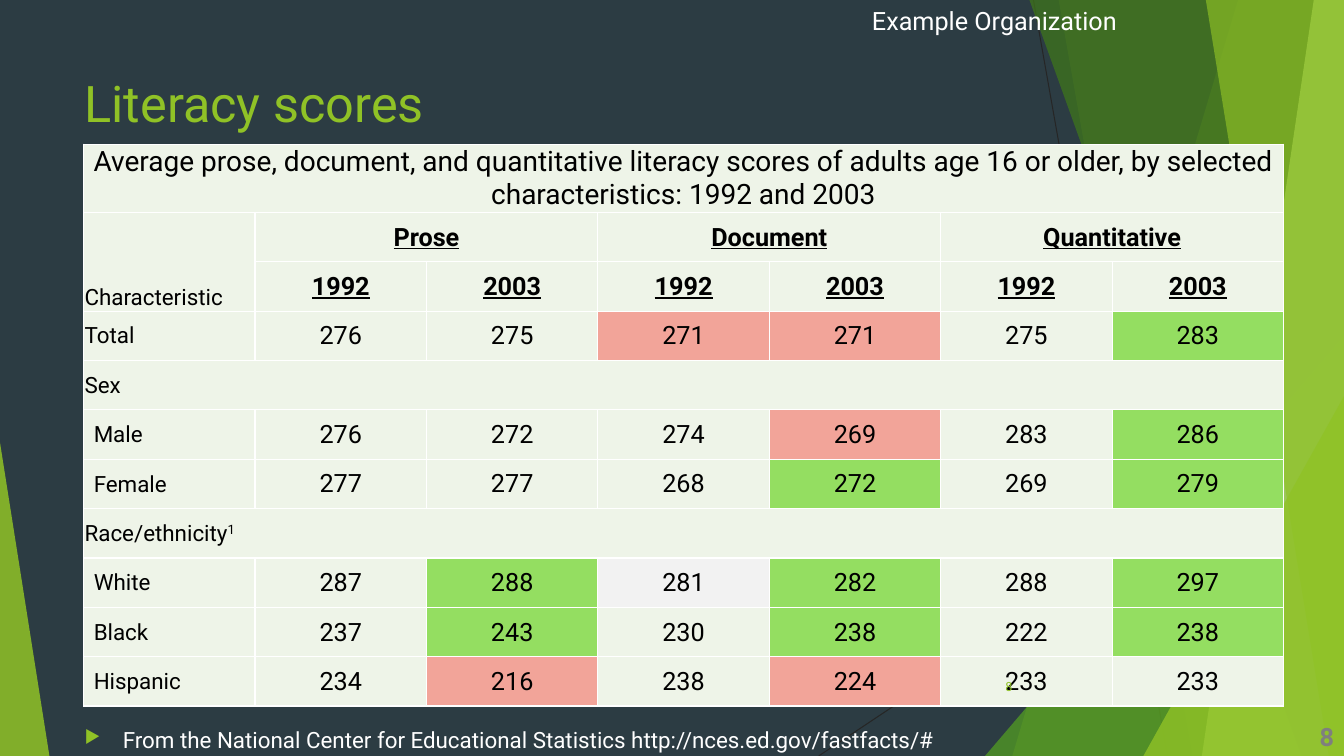
from dataclasses import dataclass

from lxml import etree
from pptx import Presentation
from pptx import util as u
from pptx.dml.color import RGBColor
from pptx.enum import shapes, text
from pptx.oxml import ns

FONT = "Roboto"
HEX = {
    "back": "2C3C43", "lime": "90C226", "leaf": "54A021", "moss": "3F7819",
    "pale": "C0E474", "line": "262626", "white": "FFFFFF", "black": "000000",
    "gray": "7F7F7F", "cell": "EEF4E8", "up": "94DE61", "down": "F2A499",
    "plain": "F2F2F2",
}
MARKS = {"+": "up", "-": "down", "=": "plain"}  # last sign of a score sets its fill
LEFT, MID, RIGHT = text.PP_ALIGN.LEFT, text.PP_ALIGN.CENTER, text.PP_ALIGN.RIGHT
TOP, CENTER, BASE = text.MSO_ANCHOR.TOP, text.MSO_ANCHOR.MIDDLE, text.MSO_ANCHOR.BOTTOM


@dataclass
class Band:
    """Four-sided strip that reaches from the top edge to the bottom edge."""
    top: tuple[float, float]
    base: tuple[float, float]
    color: str
    alpha: int


@dataclass
class Wedge:
    box: tuple[float, float, float, float]
    tip: float
    color: str
    alpha: int


@dataclass
class Label:
    words: str
    box: tuple[float, float, float, float]
    size: int
    color: str
    align: int = LEFT
    anchor: int = TOP
    bold: bool = False
    bullet: bool = False


DECOR = [
    Band((12.28, 13.33), (10.04, 13.33), "lime", 30),
    Band((10.5, 13.33), (11.83, 13.33), "lime", 20),
    Wedge((9.77, 3.33, 3.56, 4.17), 1, "leaf", 72),
    Band((10.21, 13.33), (12.91, 13.33), "moss", 70),
    Band((13.03, 13.33), (11.92, 13.33), "pale", 70),
    Band((11.96, 13.33), (13.18, 13.33), "lime", 65),
    Wedge((11.34, 3.93, 1.99, 3.57), 1, "lime", 80),
    Wedge((0, 4.39, 0.49, 3.11), 0, "lime", 85),
]
LINES = [(10.25, 0, 11.58, 7.5), (13.33, 4.03, 8.12, 7.5)]
TITLE = Label("Literacy scores", (0.74, 0.67, 9.4, 1.44), 36, "lime")
NOTES = [
    Label("From the National Center for Educational Statistics "
          "http://nces.ed.gov/fastfacts/#", (0.74, 7.15, 9.4, 0.35), 16, "white", bullet=True),
    Label("Example Organization", (8.55, 0, 4.78, 0.4), 18, "white"),
    Label("8", (9.39, 6.61, 0.75, 0.4), 9, "lime", RIGHT, CENTER),
    Label("8", (12.58, 7.12, 0.75, 0.38), 18, "gray", RIGHT, CENTER, True),
]
HEAD = ("Average prose, document, and quantitative literacy scores of adults "
        "age 16 or older, by selected characteristics: 1992 and 2003")
GROUPS = ["Prose", "Document", "Quantitative"]
YEARS = ["1992", "2003"]
SCORES = [
    ("Total", "276 275 271- 271- 275 283+"),
    ("Sex", ""),
    ("Male", "276 272 274 269- 283 286+"),
    ("Female", "277 277 268 272+ 269 279+"),
    ("Race/ethnicity", ""),
    ("White", "287 288+ 281= 282+ 288 297+"),
    ("Black", "237 243+ 230 238+ 222 238+"),
    ("Hispanic", "234 216- 238 224- 233 233"),
]
FLUSH = {"Total", "Sex", "Race/ethnicity"}


def rgb(name: str) -> RGBColor:
    return RGBColor.from_string(HEX[name])


def sub(node, tag: str, **attrs: str):
    return etree.SubElement(node, ns.qn(tag), attrs)


def add_run(para, words: str, size: int, color: str = "black", bold: bool = False,
            under: bool = False):
    run = para.add_run()
    run.text = words
    font = run.font
    font.name, font.size, font.bold, font.underline = FONT, u.Pt(size), bold, under
    font.color.rgb = rgb(color)
    return run


def draw_decor(slide, item: Band | Wedge) -> None:
    if isinstance(item, Band):
        (a, b), (c, d) = item.top, item.base
        pts = [(u.Inches(x), u.Inches(y)) for x, y in [(a, 0), (b, 0), (d, 7.5), (c, 7.5)]]
        form = slide.shapes.build_freeform(*pts[0], scale=1.0)
        form.add_line_segments(pts[1:], close=True)
        shape = form.convert_to_shape()
    else:
        shape = slide.shapes.add_shape(shapes.MSO_SHAPE.ISOSCELES_TRIANGLE,
                                       *map(u.Inches, item.box))
        shape.adjustments[0] = item.tip
    shape.shadow.inherit = False
    shape.line.fill.background()
    shape.fill.solid()
    shape.fill.fore_color.rgb = rgb(item.color)
    tint = shape.fill._xPr.find(".//" + ns.qn("a:srgbClr"))
    sub(tint, "a:alpha", val=str(item.alpha * 1000))


def draw_line(slide, ends: tuple[float, float, float, float]) -> None:
    line = slide.shapes.add_connector(shapes.MSO_CONNECTOR.STRAIGHT, *map(u.Inches, ends))
    line.line.color.rgb = rgb("line")
    line.line.width = u.Pt(0.75)
    sub(line._element.spPr, "a:effectLst")


def draw_label(slide, item: Label) -> None:
    frame = slide.shapes.add_textbox(*map(u.Inches, item.box)).text_frame
    frame.word_wrap = True
    frame.vertical_anchor = item.anchor
    para = frame.paragraphs[0]
    para.alignment = item.align
    if item.bullet:
        para.space_before = u.Pt(10)
        props = para._p.get_or_add_pPr()
        props.set("marL", str(u.Inches(0.38)))
        props.set("indent", str(-u.Inches(0.38)))
        sub(sub(props, "a:buClr"), "a:srgbClr", val=HEX["lime"])
        sub(props, "a:buSzPct", val="80000")
        sub(props, "a:buChar", char="▶")
    add_run(para, item.words, item.size, item.color, item.bold)


def fill_cell(cell, color: str) -> None:
    props = cell._tc.get_or_add_tcPr()
    for side in "LRTB":
        edge = sub(props, "a:ln" + side, w=str(u.Pt(1)))
        sub(sub(edge, "a:solidFill"), "a:srgbClr", val=HEX["white"])
    cell.fill.solid()
    cell.fill.fore_color.rgb = rgb(color)


def write(cell, words: str, size: int, align: int = MID, anchor: int = CENTER,
          left: float = 0.01, head: bool = False):
    cell.margin_left = u.Inches(left)
    cell.margin_right = cell.margin_top = u.Inches(0.01)
    cell.margin_bottom = 0
    cell.vertical_anchor = anchor
    para = cell.text_frame.paragraphs[0]
    para.alignment = align
    add_run(para, words, size, bold=head, under=head)
    return para


def draw_table(slide) -> None:
    count = 1 + len(GROUPS) * len(YEARS)
    heights = [0.65] + [0.49] * (2 + len(SCORES))
    grid = slide.shapes.add_table(len(heights), count, *map(
        u.Inches, (0.83, 1.43, 1.7 * count, sum(heights)))).table
    grid.first_row = grid.horz_banding = False
    for row, height in zip(grid.rows, heights):
        row.height = u.Inches(height)
    for col in grid.columns:
        col.width = u.Inches(1.7)
    for cell in grid.iter_cells():
        fill_cell(cell, "cell")

    # Heading rows
    grid.cell(0, 0).merge(grid.cell(0, count - 1))
    write(grid.cell(0, 0), HEAD, 20)
    grid.cell(1, 0).merge(grid.cell(2, 0))
    write(grid.cell(1, 0), "Characteristic", 16, LEFT, BASE)
    for i, group in enumerate(GROUPS):
        first = 1 + i * len(YEARS)
        grid.cell(1, first).merge(grid.cell(1, first + 1))
        write(grid.cell(1, first), group, 18, head=True)
        for j, year in enumerate(YEARS):
            write(grid.cell(2, first + j), year, 18, head=True)

    # Score rows
    for r, (name, scores) in enumerate(SCORES, 3):
        if not scores:
            grid.cell(r, 0).merge(grid.cell(r, count - 1))
        para = write(grid.cell(r, 0), name, 16, LEFT, left=0.01 if name in FLUSH else 0.1)
        if name == "Race/ethnicity":
            add_run(para, "1", 16).font._element.set("baseline", "30000")
        for c, score in enumerate(scores.split(), 1):
            cell = grid.cell(r, c)
            write(cell, score.rstrip("+-="), 18)
            if score[-1] in MARKS:
                cell.fill.fore_color.rgb = rgb(MARKS[score[-1]])


def main() -> None:
    deck = Presentation()
    deck.slide_width, deck.slide_height = u.Inches(13.33), u.Inches(7.5)
    slide = deck.slides.add_slide(deck.slide_layouts[6])
    slide.background.fill.solid()
    slide.background.fill.fore_color.rgb = rgb("back")
    for ends in LINES:
        draw_line(slide, ends)
    for item in DECOR:
        draw_decor(slide, item)
    draw_label(slide, TITLE)
    draw_table(slide)
    for item in NOTES:
        draw_label(slide, item)
    deck.save("out.pptx")


if __name__ == "__main__":
    main()
